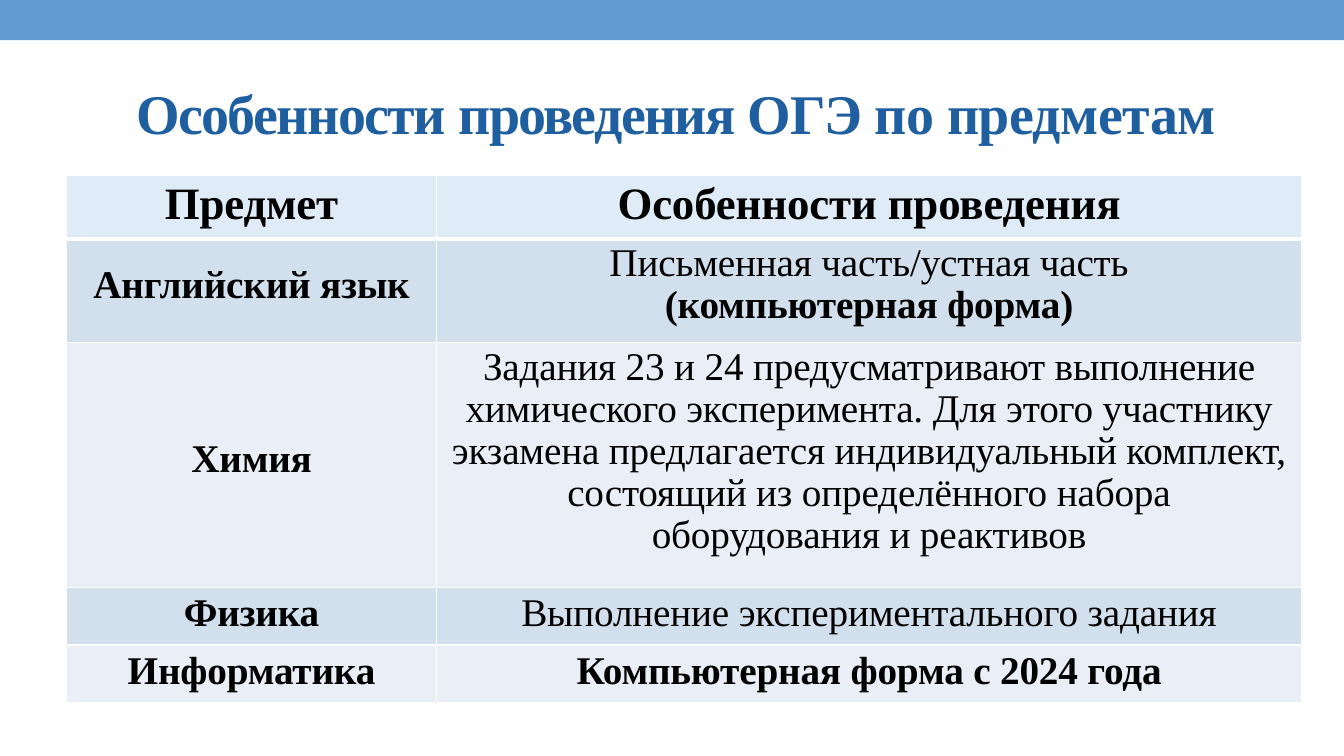
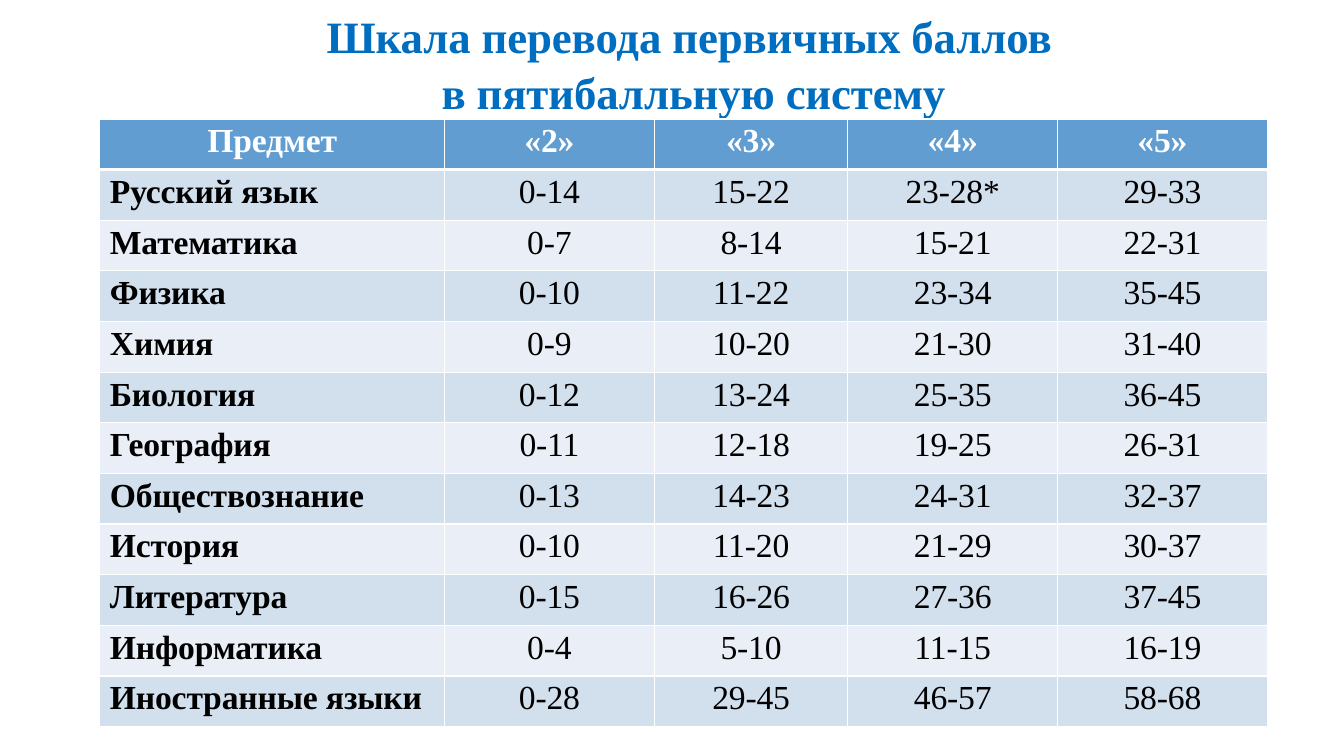
from dataclasses import dataclass
from typing import NamedTuple

from lxml.etree import SubElement
from pptx import Presentation
from pptx.dml.color import RGBColor
from pptx.enum.shapes import MSO_SHAPE
from pptx.enum.text import MSO_ANCHOR, PP_ALIGN
from pptx.oxml.ns import qn
from pptx.util import Inches, Pt

# Shared look
FONT = "Times New Roman"
BLUE, WHITE, BLACK = "619DD1", "FFFFFF", "000000"
PALE_HEADER = "DFEBF6"
STRIPES = ("D2DFED", "EAEFF7")
SLIDE_WIDTH, SLIDE_HEIGHT = 13.33, 7.5


class Span(NamedTuple):
    text: str
    spacing: float = -0.1


class Line(NamedTuple):
    spans: tuple[Span, ...]
    bold: bool = True
    align: PP_ALIGN = PP_ALIGN.CENTER
    margin: float = 0
    first_indent: float = 0
    space_before: float = 0
    line_spacing: float = 1.0


@dataclass
class Title:
    left: float
    top: float
    width: float
    height: float
    inset: float
    size: int
    color: str
    line: Line


@dataclass
class CellContent:
    lines: list[Line]
    anchor: MSO_ANCHOR = MSO_ANCHOR.TOP
    bottom: float = 0


@dataclass
class Grid:
    left: float
    top: float
    columns: list[float]
    heights: list[float]
    rows: list[list[CellContent]]
    header_fill: str
    header_color: str
    header_size: int
    body_size: int


def rgb(color: str) -> RGBColor:
    return RGBColor.from_string(color)


def apply_format(target, values: dict) -> None:
    for name, value in values.items():
        setattr(target, name, value)


def write_lines(frame, lines: list[Line], size: int, color: str) -> None:
    for index, line in enumerate(lines):
        paragraph = frame.paragraphs[0] if index == 0 else frame.add_paragraph()
        apply_format(paragraph, {
            "alignment": line.align,
            "space_before": Pt(line.space_before),
            "line_spacing": line.line_spacing,
        })
        properties = paragraph._p.get_or_add_pPr()
        properties.set("marL", str(Inches(line.margin)))
        properties.set("indent", str(Inches(line.first_indent)))
        for span in line.spans:
            run = paragraph.add_run()
            run.text = span.text
            apply_format(run.font, {"name": FONT, "size": Pt(size), "bold": line.bold})
            run.font.color.rgb = rgb(color)
            run._r.get_or_add_rPr().set("spc", str(round(span.spacing * 100)))


def draw_band(slide) -> None:
    band = slide.shapes.add_shape(MSO_SHAPE.RECTANGLE, 0, 0, Inches(SLIDE_WIDTH), Inches(0.4))
    band.shadow.inherit = False
    band.fill.solid()
    band.fill.fore_color.rgb = rgb(BLUE)
    band.line.fill.background()


def draw_title(slide, title: Title) -> None:
    box = slide.shapes.add_textbox(
        Inches(title.left), Inches(title.top), Inches(title.width), Inches(title.height))
    apply_format(box.text_frame, {
        "word_wrap": True, "margin_left": 0, "margin_right": 0,
        "margin_top": Inches(title.inset), "margin_bottom": 0,
    })
    write_lines(box.text_frame, [title.line], title.size, title.color)


def draw_borders(cell, widths: dict[str, float]) -> None:
    properties = cell._tc.get_or_add_tcPr()
    for side, width in widths.items():
        border = SubElement(properties, qn(f"a:ln{side}"), w=str(Pt(width)))
        fill = SubElement(border, qn("a:solidFill"))
        SubElement(fill, qn("a:srgbClr"), val=WHITE)


def draw_grid(slide, grid: Grid) -> None:
    table = slide.shapes.add_table(
        len(grid.heights), len(grid.columns), Inches(grid.left), Inches(grid.top),
        Inches(sum(grid.columns)), Inches(sum(grid.heights))).table
    apply_format(table, {"first_row": False, "horz_banding": False})
    for column, width in zip(table.columns, grid.columns):
        column.width = Inches(width)
    for row, height in zip(table.rows, grid.heights):
        row.height = Inches(height)

    for row_index, contents in enumerate(grid.rows):
        header = row_index == 0
        fill = grid.header_fill if header else STRIPES[(row_index - 1) % 2]
        size = grid.header_size if header else grid.body_size
        color = grid.header_color if header else BLACK
        borders = {"L": 1, "R": 1, "T": 3 if row_index == 1 else 1, "B": 3 if header else 1}
        for column_index, content in enumerate(contents):
            cell = table.cell(row_index, column_index)
            apply_format(cell, {
                "margin_left": 0, "margin_right": 0, "margin_top": Inches(0.04),
                "margin_bottom": Inches(content.bottom), "vertical_anchor": content.anchor,
            })
            draw_borders(cell, borders)
            cell.fill.solid()
            cell.fill.fore_color.rgb = rgb(fill)
            write_lines(cell.text_frame, content.lines, size, color)


def text_cell(*texts: str, bold: bool = True, line_spacing: float = 1.0) -> CellContent:
    return CellContent([
        Line((Span(text),), bold, space_before=0 if index else 2.6, line_spacing=line_spacing)
        for index, text in enumerate(texts)])


def middle_cell(text: str) -> CellContent:
    return CellContent([Line((Span(text),))], MSO_ANCHOR.MIDDLE, 0.15)


# Slide 1: how each subject is examined
FEATURES_TITLE = Title(0.75, 0.64, 11.83, 0.93, 0.14, 40, "1F5F9F", Line(
    (Span("Особенности ", -1.1), Span("проведения ", -1.2), Span("ОГЭ ", -1),
     Span("по ", -0.7), Span("предметам", -0.4)),
    align=PP_ALIGN.LEFT, margin=0.6, space_before=0.9))

ENGLISH_FORM = CellContent([
    Line((Span("Письменная часть/устная часть"),), False, space_before=2.6, line_spacing=0.97),
    Line((Span("(компьютерная форма)"),), line_spacing=0.97),
])

FEATURES = Grid(
    0.66, 1.74, [3.67, 8.58], [0.63, 1.03, 2.43, 0.57, 0.57],
    [
        [text_cell("Предмет"), text_cell("Особенности проведения")],
        [middle_cell("Английский язык"), ENGLISH_FORM],
        [middle_cell("Химия"), text_cell(
            "Задания 23 и 24 предусматривают выполнение химического эксперимента. "
            "Для этого участнику",
            "экзамена предлагается индивидуальный комплект, "
            "состоящий из определённого набора",
            "оборудования и реактивов", bold=False, line_spacing=0.97)],
        [text_cell("Физика"), text_cell("Выполнение экспериментального задания", bold=False)],
        [text_cell("Информатика"), text_cell("Компьютерная форма с 2024 года")],
    ],
    PALE_HEADER, BLACK, 32, 28)

# Slide 2: primary scores for each mark
SCALE_TITLE = Title(3.23, 0.05, 7.23, 1.1, 0.01, 32, "006EC0", Line(
    (Span("Шкала перевода первичных баллов в пятибалльную систему"),),
    align=PP_ALIGN.LEFT, margin=1.15, first_indent=-1.14, space_before=1.1,
    line_spacing=1.05))

SCORES = [
    ("Русский язык", "0-14", "15-22", "23-28*", "29-33"),
    ("Математика", "0-7", "8-14", "15-21", "22-31"),
    ("Физика", "0-10", "11-22", "23-34", "35-45"),
    ("Химия", "0-9", "10-20", "21-30", "31-40"),
    ("Биология", "0-12", "13-24", "25-35", "36-45"),
    ("География", "0-11", "12-18", "19-25", "26-31"),
    ("Обществознание", "0-13", "14-23", "24-31", "32-37"),
    ("История", "0-10", "11-20", "21-29", "30-37"),
    ("Литература", "0-15", "16-26", "27-36", "37-45"),
    ("Информатика", "0-4", "5-10", "11-15", "16-19"),
    ("Иностранные языки", "0-28", "29-45", "46-57", "58-68"),
]


def score_row(subject: str, *scores: str) -> list[CellContent]:
    name = Line((Span(subject),), align=PP_ALIGN.LEFT, margin=0.1, space_before=2.8)
    return [CellContent([name])] + [text_cell(score, bold=False) for score in scores]


SCALE_HEADER = [text_cell(name) for name in ("Предмет", "«2»", "«3»", "«4»", "«5»")]
SCALE = Grid(
    0.99, 1.18, [3.42, 2.08, 1.92, 2.08, 2.08],
    [6.03 / (len(SCORES) + 1)] * (len(SCORES) + 1),
    [SCALE_HEADER] + [score_row(*scores) for scores in SCORES],
    BLUE, WHITE, 24, 24)


def main() -> None:
    presentation = Presentation()
    apply_format(presentation, {
        "slide_width": Inches(SLIDE_WIDTH), "slide_height": Inches(SLIDE_HEIGHT)})
    blank = presentation.slide_layouts[6]
    for title, grid, has_band in ((FEATURES_TITLE, FEATURES, True), (SCALE_TITLE, SCALE, False)):
        slide = presentation.slides.add_slide(blank)
        if has_band:
            draw_band(slide)
        draw_title(slide, title)
        draw_grid(slide, grid)
    presentation.save("out.pptx")


if __name__ == "__main__":
    main()
